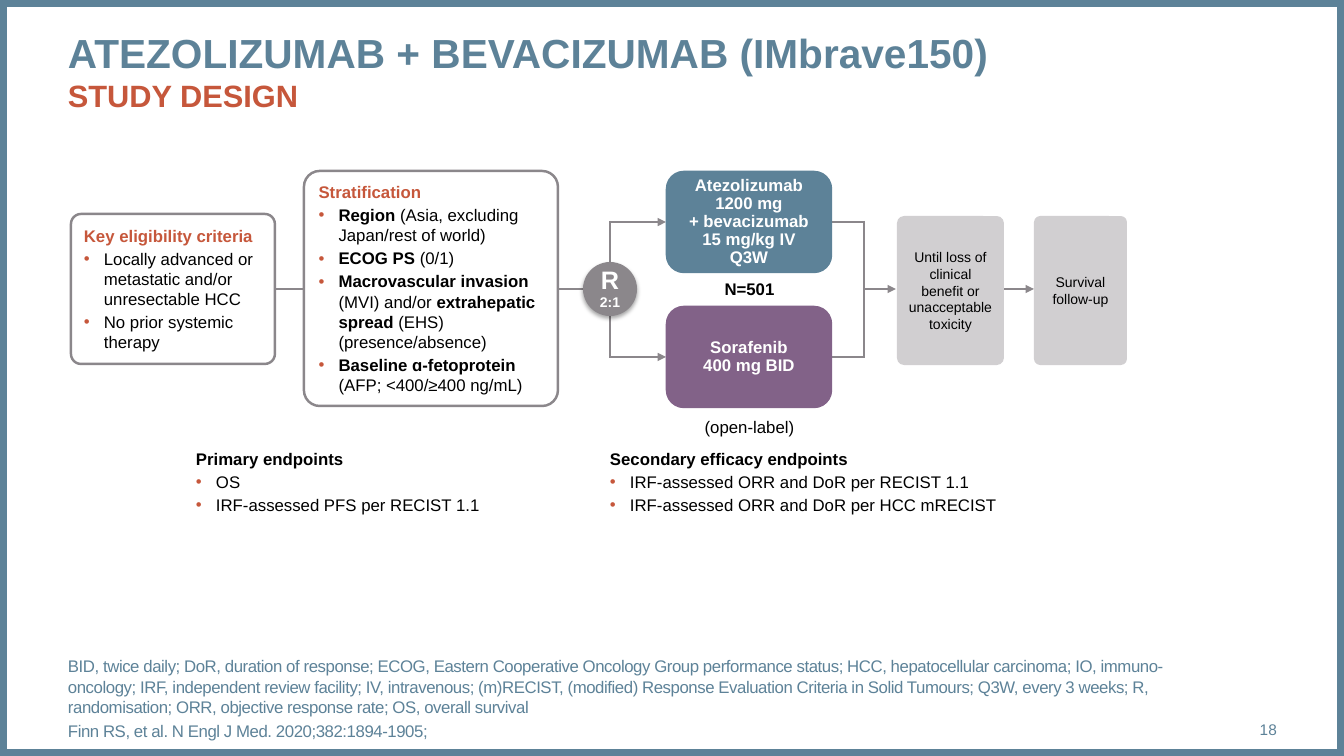
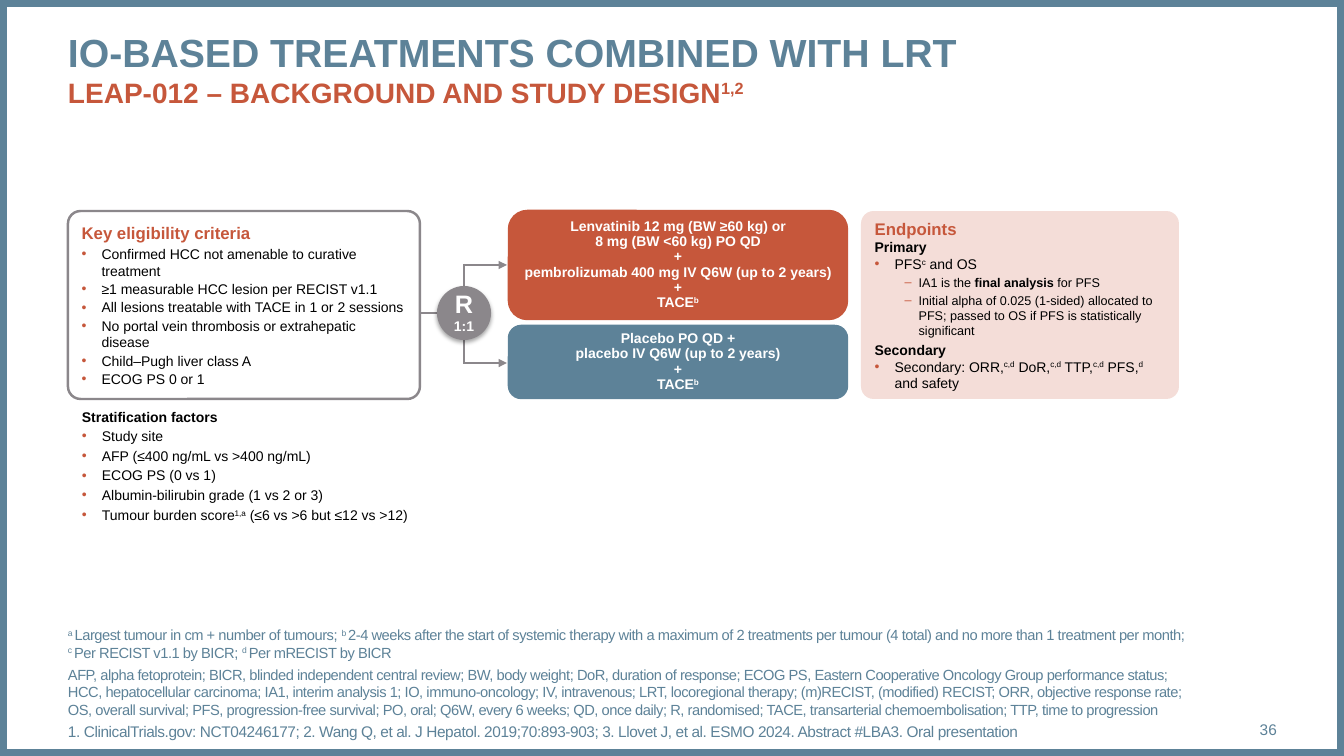
import copy

from lxml import etree
from pptx import Presentation
from pptx import util as u
from pptx.dml.color import RGBColor
from pptx.enum import shapes, text
from pptx.oxml.ns import qn

SCALE = 914400 / 100.8
WIDTH, HEIGHT = 1344, 756
FONT = "Arial"
BLUE, RED, PURPLE, GREY = "5D8298", "C6573B", "826288", "8B878B"
LIGHT_GREY, PINK, WHITE, BLACK = "D1CFD1", "F4DDD8", "FFFFFF", "000000"
LEFT, CENTER, RIGHT = text.PP_ALIGN.LEFT, text.PP_ALIGN.CENTER, text.PP_ALIGN.RIGHT
TOP, MIDDLE, BOTTOM = text.MSO_ANCHOR.TOP, text.MSO_ANCHOR.MIDDLE, text.MSO_ANCHOR.BOTTOM
NO_INSETS, BOX_INSETS, NARROW_INSETS = (0, 0), (10, 5), (4, 5)

PLAIN = {"size": 12, "color": BLACK, "bold": False, "align": LEFT,
         "before": 0, "after": 0, "spacing": 1.0}
HEADING = PLAIN | {"color": RED, "bold": True, "after": 2}
LABEL = PLAIN | {"bold": True, "after": 2}
BULLET = PLAIN | {"after": 2, "bullet": "•", "indent": (20, -20)}
SMALL_BULLET = BULLET | {"size": 10}
DASH = BULLET | {"size": 9, "bullet": "–", "indent": (44, -14), "level": 1}
ARM = PLAIN | {"color": WHITE, "bold": True, "align": CENTER, "spacing": 0.9}
SMALL_ARM = ARM | {"size": 10}
STEP = PLAIN | {"size": 10, "align": CENTER}
NOTE = PLAIN | {"color": BLUE, "before": 3, "tracking": -30}
NUMBER = PLAIN | {"size": 11, "color": BLUE, "align": RIGHT}
TITLE = PLAIN | {"color": BLUE, "bold": True}


def px(length):
    return u.Emu(round(length * SCALE))


def color(hex_string):
    return RGBColor.from_string(hex_string)


def styled(style, *texts):
    """Paragraphs of one style; each is a list of (text, style) pieces."""
    return [[(words, style)] for words in texts]


def add_run(paragraph, words, style, bold, raised):
    run = paragraph.add_run()
    run.text = words
    values = {"name": FONT, "size": u.Pt(style["size"]), "bold": bold}
    for name, value in values.items():
        setattr(run.font, name, value)
    run.font.color.rgb = color(style["color"])
    properties = run._r.get_or_add_rPr()
    if raised:
        properties.set("baseline", "30000")
    if "tracking" in style:
        properties.set("spc", str(style["tracking"]))
    return properties


def add_runs(paragraph, words, style):
    """Write text in which **..** flips bold and ^..^ is superscript."""
    properties = None
    for i, chunk in enumerate(words.split("**")):
        for j, part in enumerate(chunk.split("^")):
            for k, line in enumerate(part.split("\n")):
                if k:
                    paragraph.add_line_break()
                    paragraph._p[-1].append(copy.deepcopy(properties))
                if line:
                    properties = add_run(paragraph, line, style,
                                         style["bold"] != bool(i % 2), j % 2)


def format_paragraph(paragraph, style, first):
    properties = paragraph._p.get_or_add_pPr()
    left, hanging = style.get("indent", (0, 0))
    properties.set("marL", str(px(left)))
    properties.set("indent", str(px(hanging)))
    if "bullet" in style:
        bullet_color = etree.SubElement(properties, qn("a:buClr"))
        etree.SubElement(bullet_color, qn("a:srgbClr"), val=RED)
        etree.SubElement(properties, qn("a:buFont"), typeface=FONT)
        etree.SubElement(properties, qn("a:buChar"), char=style["bullet"])
    else:
        etree.SubElement(properties, qn("a:buNone"))
    values = {"alignment": style["align"], "level": style.get("level", 0),
              "line_spacing": style["spacing"], "space_after": u.Pt(style["after"]),
              "space_before": u.Pt(0 if first else style["before"])}
    for name, value in values.items():
        setattr(paragraph, name, value)


def write(shape, paragraphs, anchor=TOP, insets=NO_INSETS):
    frame = shape.text_frame
    across, down = map(px, insets)
    values = {"word_wrap": True, "auto_size": text.MSO_AUTO_SIZE.NONE,
              "vertical_anchor": anchor, "margin_left": across, "margin_right": across,
              "margin_top": down, "margin_bottom": down}
    for name, value in values.items():
        setattr(frame, name, value)
    for index, pieces in enumerate(paragraphs):
        paragraph = frame.add_paragraph() if index else frame.paragraphs[0]
        format_paragraph(paragraph, pieces[0][1], index == 0)
        for words, style in pieces:
            add_runs(paragraph, words, style)


def place(shape, box):
    for name, value in zip(("left", "top", "width", "height"), box):
        setattr(shape, name, px(value))


def add_text(slide, box, paragraphs, anchor=TOP):
    write(slide.shapes.add_textbox(*map(px, box)), paragraphs, anchor)


def add_shape(slide, kind, box, fill=None, line=None, weight=1.75):
    shape = slide.shapes.add_shape(kind, *map(px, box))
    shape.shadow.inherit = False
    if fill:
        shape.fill.solid()
        shape.fill.fore_color.rgb = color(fill)
    else:
        shape.fill.background()
    if line:
        shape.line.color.rgb = color(line)
        shape.line.width = u.Pt(weight)
    else:
        shape.line.fill.background()
    return shape


def add_panel(slide, box, paragraphs, fill=WHITE, line=None, corner=0.067,
              insets=BOX_INSETS):
    panel = add_shape(slide, shapes.MSO_SHAPE.ROUNDED_RECTANGLE, box, fill, line)
    panel.adjustments[0] = corner
    write(panel, paragraphs, MIDDLE, insets)


def add_arm(slide, box, paragraphs, fill, insets=BOX_INSETS):
    add_panel(slide, box, paragraphs, fill, fill, 0.169, insets)


def add_line(slide, start, end, arrow=False):
    line = slide.shapes.add_connector(shapes.MSO_CONNECTOR.STRAIGHT,
                                      *map(px, start + end))
    line.line.color.rgb = color(GREY)
    line.line.width = u.Pt(2)
    if arrow:
        etree.SubElement(line.line._get_or_add_ln(), qn("a:tailEnd"), type="triangle")
    etree.SubElement(line._element.spPr, qn("a:effectLst"))


def add_randomisation(slide, center, ratio, start, end, branches):
    """Line in from start, circle at center, one arrow to end for each branch."""
    x, y = center
    add_line(slide, (start, y), center)
    add_line(slide, (x, branches[0] - 1), (x, branches[1] + 1))
    for branch in branches:
        add_line(slide, (x, branch), (end, branch), arrow=True)
    circle = add_shape(slide, shapes.MSO_SHAPE.OVAL, (x - 27, y - 27, 54, 54), GREY)
    shadow = etree.SubElement(circle._element.spPr.find(qn("a:effectLst")),
                              qn("a:outerShdw"), blurRad=str(u.Pt(3.1)),
                              dist=str(u.Pt(1.8)), dir="5400000", rotWithShape="0")
    tint = etree.SubElement(shadow, qn("a:srgbClr"), val=BLACK)
    etree.SubElement(tint, qn("a:alpha"), val="35000")
    write(circle, [[("R\n", ARM | {"size": 18}), (ratio, SMALL_ARM)]], MIDDLE, (0, 5))


def add_merge(slide, start, x, end, branches):
    for branch in branches:
        add_line(slide, (start, branch), (x, branch))
    add_line(slide, (x, branches[0] - 1), (x, branches[1] + 1))
    middle = sum(branches) // 2
    add_line(slide, (x, middle), (end, middle), arrow=True)


def add_frame_to_layout(slide):
    frame = add_shape(slide, shapes.MSO_SHAPE.RECTANGLE, (0, 0, WIDTH, HEIGHT),
                      None, BLUE, 10)
    slide.slide_layout.shapes._spTree.insert(2, frame._element)


def add_study_slide(presentation, title, subtitle, sizes, number, notes):
    slide = presentation.slides.add_slide(presentation.slide_layouts[1])
    heading, body = slide.shapes.title, slide.placeholders[1]
    place(heading, (68, 28, 1255, 95))
    write(heading, [[(title + " \n", TITLE | {"size": sizes[0]}),
                     (subtitle, TITLE | {"size": sizes[1], "color": RED})]])
    place(body, (68, 701, 1121, 40))
    write(body, notes, BOTTOM)
    add_text(slide, (1190, 709, 87, 40), styled(NUMBER, number), MIDDLE)
    return slide


def build_imbrave(presentation):
    notes = styled(
        NOTE,
        "BID, twice daily; DoR, duration of response; ECOG, Eastern Cooperative Oncology Group performance status; HCC, hepatocellular carcinoma; IO, immuno-oncology; IRF, independent review facility; IV, intravenous; (m)RECIST, (modified) Response Evaluation Criteria in Solid Tumours; Q3W, every 3 weeks; R, randomisation; ORR, objective response rate; OS, overall survival",
        "Finn RS, et al. N Engl J Med. 2020;382:1894-1905;")
    slide = add_study_slide(presentation, "ATEZOLIZUMAB + BEVACIZUMAB (IMbrave150)",
                            "STUDY DESIGN", (29, 22), "18", notes)
    add_frame_to_layout(slide)
    branches = (222, 357)
    add_randomisation(slide, (610, 289), "2:1", 275, 666, branches)
    add_merge(slide, 831, 864, 896, branches)
    add_line(slide, (1003, 289), (1034, 289), arrow=True)

    add_panel(slide, (71, 214, 204, 150),
              styled(HEADING, "Key eligibility criteria")
              + styled(BULLET, "Locally advanced or metastatic and/or unresectable HCC",
                       "No prior systemic therapy"), line=GREY)
    add_panel(slide, (304, 171, 254, 235),
              styled(HEADING, "Stratification")
              + styled(BULLET, "**Region** (Asia, excluding Japan/rest of world)",
                       "**ECOG PS **(0/1)",
                       "**Macrovascular invasion **(MVI) and/or **extrahepatic spread** (EHS) (presence/absence)",
                       "**Baseline ɑ-fetoprotein \n**(AFP; <400/≥400 ng/mL)"), line=GREY)
    arms = ((BLUE, ("Atezolizumab", "1200 mg\n+ bevacizumab\n15 mg/kg IV Q3W")),
            (PURPLE, ("Sorafenib", "400 mg BID")))
    for branch, (fill, words) in zip(branches, arms):
        add_arm(slide, (667, branch - 50, 164, 100), styled(ARM, *words), fill)
    add_text(slide, (700, 279, 99, 20), styled(LABEL | {"align": CENTER}, "N=501"))
    add_text(slide, (700, 417, 99, 20), styled(PLAIN | {"align": CENTER}, "(open-label)"))

    steps = ((897, 107, "Until loss of clinical benefit or unacceptable toxicity"),
             (1034, 93, "Survival\nfollow-up"))
    for left, width, words in steps:
        add_panel(slide, (left, 216, width, 149), styled(STEP, words), LIGHT_GREY,
                  insets=(8, 5))
    endpoints = ((196, 304, "Primary endpoints",
                  ("OS", "IRF-assessed PFS per RECIST 1.1")),
                 (610, 398, "Secondary efficacy endpoints",
                  ("IRF-assessed ORR and DoR per RECIST 1.1",
                   "IRF-assessed ORR and DoR per HCC mRECIST")))
    for left, width, name, items in endpoints:
        add_text(slide, (left, 449, width, 67),
                 styled(LABEL, name) + styled(BULLET, *items))


def build_leap(presentation):
    small_note = NOTE | {"size": 10.5}
    notes = styled(
        small_note,
        "^a ^Largest tumour in cm + number of tumours; ^b ^2-4 weeks after the start of systemic therapy with a maximum of 2 treatments per tumour (4 total) and no more than 1 treatment per month; ^c ^Per RECIST v1.1 by BICR; ^d ^Per mRECIST by BICR",
        "AFP, alpha fetoprotein; BICR, blinded independent central review; BW, body weight; DoR, duration of response; ECOG PS, Eastern Cooperative Oncology Group performance status; HCC, hepatocellular carcinoma; IA1, interim analysis 1; IO, immuno-oncology; IV, intravenous; LRT, locoregional therapy; (m)RECIST, (modified) RECIST; ORR, objective response rate; OS, overall survival; PFS, progression-free survival; PO, oral; Q6W, every 6 weeks; QD, once daily; R, randomised; TACE, transarterial chemoembolisation; TTP, time to progression")
    notes += styled(
        NOTE | {"size": 11},
        "1. ClinicalTrials.gov: NCT04246177; 2. Wang Q, et al. J Hepatol. 2019;70:893-903; 3. Llovet J, et al. ESMO 2024. Abstract #LBA3. Oral presentation")
    slide = add_study_slide(presentation, "IO-BASED TREATMENTS COMBINED WITH LRT",
                            "LEAP-012 – BACKGROUND AND STUDY DESIGN^1,2^",
                            (28, 20), "36", notes)
    add_randomisation(slide, (464, 313), "1:1", 420, 507, (265, 363))

    add_panel(slide, (68, 211, 352, 188),
              styled(HEADING, "Key eligibility criteria")
              + styled(SMALL_BULLET | {"after": 1},
                       "Confirmed HCC not amenable to curative treatment",
                       "≥1 measurable HCC lesion per RECIST v1.1",
                       "All lesions treatable with TACE in 1 or 2 sessions",
                       "No portal vein thrombosis or extrahepatic disease",
                       "Child–Pugh liver class A", "ECOG PS 0 or 1"), line=GREY)
    add_text(slide, (82, 408, 337, 116),
             styled(LABEL | {"size": 10}, "Stratification factors")
             + styled(SMALL_BULLET, "Study site", "AFP (≤400 ng/mL vs >400 ng/mL)",
                      "ECOG PS (0 vs 1)", "Albumin-bilirubin grade (1 vs 2 or 3)",
                      "Tumour burden score^1,a^ (≤6 vs >6 but ≤12 vs >12)"))
    arms = ((211, 108, RED, ("Lenvatinib 12 mg (BW ≥60 kg) or\n8 mg (BW <60 kg) PO QD", "+",
                             "pembrolizumab 400 mg IV Q6W (up to 2 years)", "+", "TACE^b^")),
            (326, 72, BLUE, ("Placebo PO QD +", "placebo IV Q6W (up to 2 years)",
                             "+\nTACE^b^")))
    for top, height, fill, words in arms:
        add_arm(slide, (509, top, 338, height), styled(SMALL_ARM, *words), fill,
                NARROW_INSETS)
    group = LABEL | {"size": 10, "after": 0}
    add_panel(slide, (861, 211, 318, 188),
              styled(HEADING | {"after": 0}, "Endpoints")
              + styled(group, "Primary") + styled(SMALL_BULLET, "PFS^c^ and OS")
              + styled(DASH, "IA1 is the **final analysis **for PFS",
                       "Initial alpha of 0.025 (1-sided) allocated to PFS; passed to OS if PFS is statistically significant")
              + styled(group, "Secondary")
              + styled(SMALL_BULLET,
                       "Secondary: ORR,^c,d^ DoR,^c,d^ TTP,^c,d^ PFS,^d^ and safety"), PINK)


def main():
    presentation = Presentation()
    presentation.slide_width, presentation.slide_height = px(WIDTH), px(HEIGHT)
    build_imbrave(presentation)
    build_leap(presentation)
    presentation.save("out.pptx")


if __name__ == "__main__":
    main()
